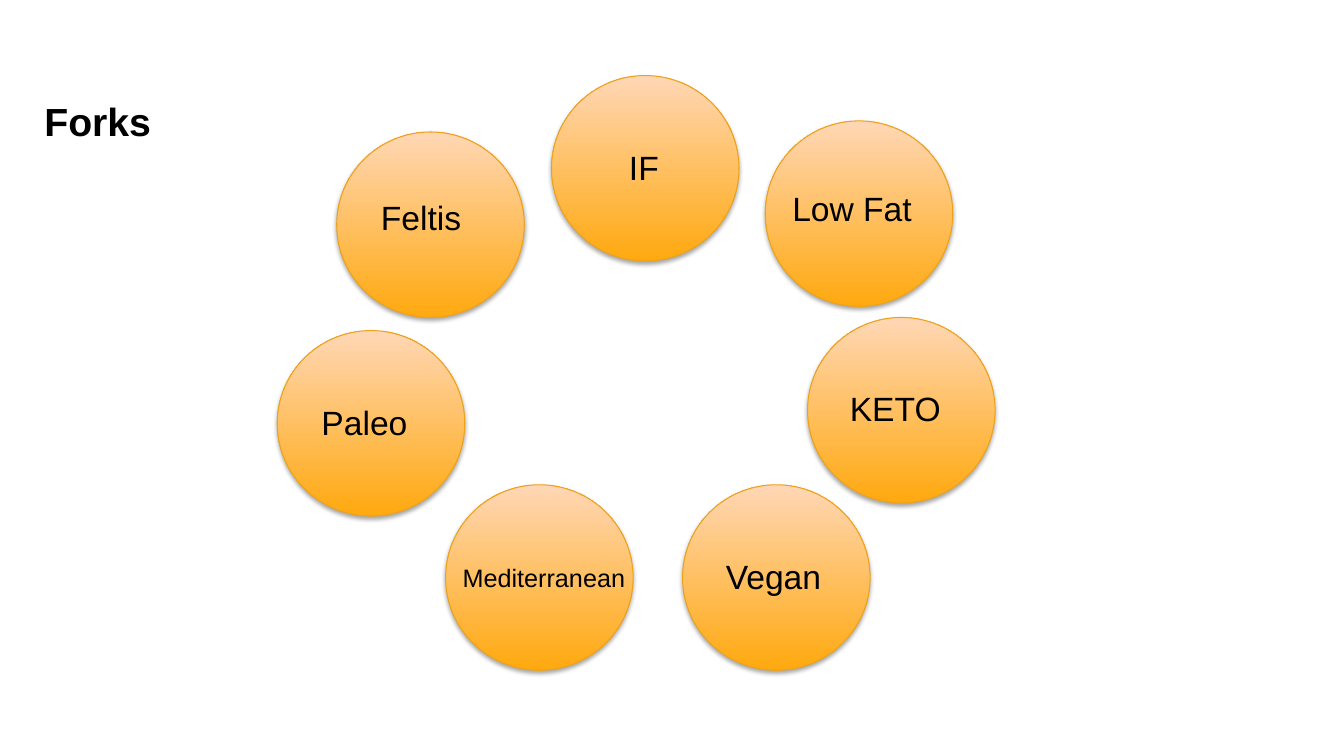
"""Build the Forks slide: a ring of diet names in shaded circles."""
from dataclasses import dataclass

from lxml import etree
from pptx import Presentation
from pptx.dml.color import RGBColor
from pptx.enum import shapes, text
from pptx.oxml import ns
from pptx.util import Inches, Pt


@dataclass(frozen=True)
class Theme:
    font: str = "Arial"
    ink: RGBColor = RGBColor(0x00, 0x00, 0x00)
    amber: RGBColor = RGBColor(0xFF, 0xA9, 0x0F)
    peach: RGBColor = RGBColor(0xFF, 0xD7, 0xB5)
    rim: RGBColor = RGBColor(0xEE, 0xA2, 0x1A)
    shadow: str = "000000"
    title: int = 28
    label: int = 24
    small_label: int = 18


theme = Theme()


def style(paragraph, size, bold=False):
    paragraph.alignment = text.PP_ALIGN.LEFT
    paragraph.font.name = theme.font
    paragraph.font.size = Pt(size)
    paragraph.font.bold = bold
    paragraph.font.color.rgb = theme.ink


def add_soft_shadow(shape):
    shape.shadow.inherit = False
    effects = shape._element.spPr.find(ns.qn("a:effectLst"))
    shadow = etree.SubElement(
        effects, ns.qn("a:outerShdw"), blurRad=str(Pt(3.1)), dist=str(Pt(1.8)),
        dir="5400000", rotWithShape="0")
    color = etree.SubElement(shadow, ns.qn("a:srgbClr"), val=theme.shadow)
    etree.SubElement(color, ns.qn("a:alpha"), val="35000")


deck = Presentation()
deck.slide_width, deck.slide_height = Inches(13.33), Inches(7.5)
slide = deck.slides.add_slide(deck.slide_layouts[5])

heading = slide.shapes.title
heading.left, heading.top = Inches(0.34), Inches(0.91)
heading.width, heading.height = Inches(2.56), Inches(0.7)
heading.text_frame.text = "Forks"
heading.text_frame.vertical_anchor = text.MSO_ANCHOR.MIDDLE
heading.text_frame.margin_bottom = Inches(0.17)
style(heading.text_frame.paragraphs[0], theme.title, bold=True)

DISC_WIDTH, DISC_HEIGHT = 1.86, 1.84
diets = [
    ("Paleo", (2.75, 3.28), (3.09, 3.94, 1.08, 0.5), theme.label),
    ("IF", (5.47, 0.75), (6.14, 1.41, 0.73, 0.5), theme.label),
    ("Vegan", (6.77, 4.81), (7.1, 5.47, 1.18, 0.5), theme.label),
    ("KETO", (8.01, 3.15), (8.33, 3.8, 1.22, 0.5), theme.label),
    ("Mediterranean", (4.42, 4.81), (4.49, 5.53, 1.92, 0.4), theme.small_label),
    ("Feltis", (3.34, 1.31), (3.68, 1.9, 1.18, 0.5), theme.label),
    ("Low Fat", (7.59, 1.2), (7.76, 1.82, 1.53, 0.5), theme.label),
]

for name, (left, top), label_box, size in diets:
    diet = slide.shapes.add_group_shape()
    disc = diet.shapes.add_shape(
        shapes.MSO_SHAPE.OVAL, Inches(left), Inches(top),
        Inches(DISC_WIDTH), Inches(DISC_HEIGHT))
    disc.fill.gradient()
    disc.fill.gradient_angle = 90
    for stop, color in zip(disc.fill.gradient_stops, (theme.amber, theme.peach)):
        stop.color.rgb = color
    disc.line.color.rgb = theme.rim
    disc.line.width = Pt(0.75)
    add_soft_shadow(disc)

    label = diet.shapes.add_textbox(*map(Inches, label_box)).text_frame
    label.word_wrap = True
    label.auto_size = text.MSO_AUTO_SIZE.SHAPE_TO_FIT_TEXT
    label.text = name
    style(label.paragraphs[0], size)

deck.save("out.pptx")
